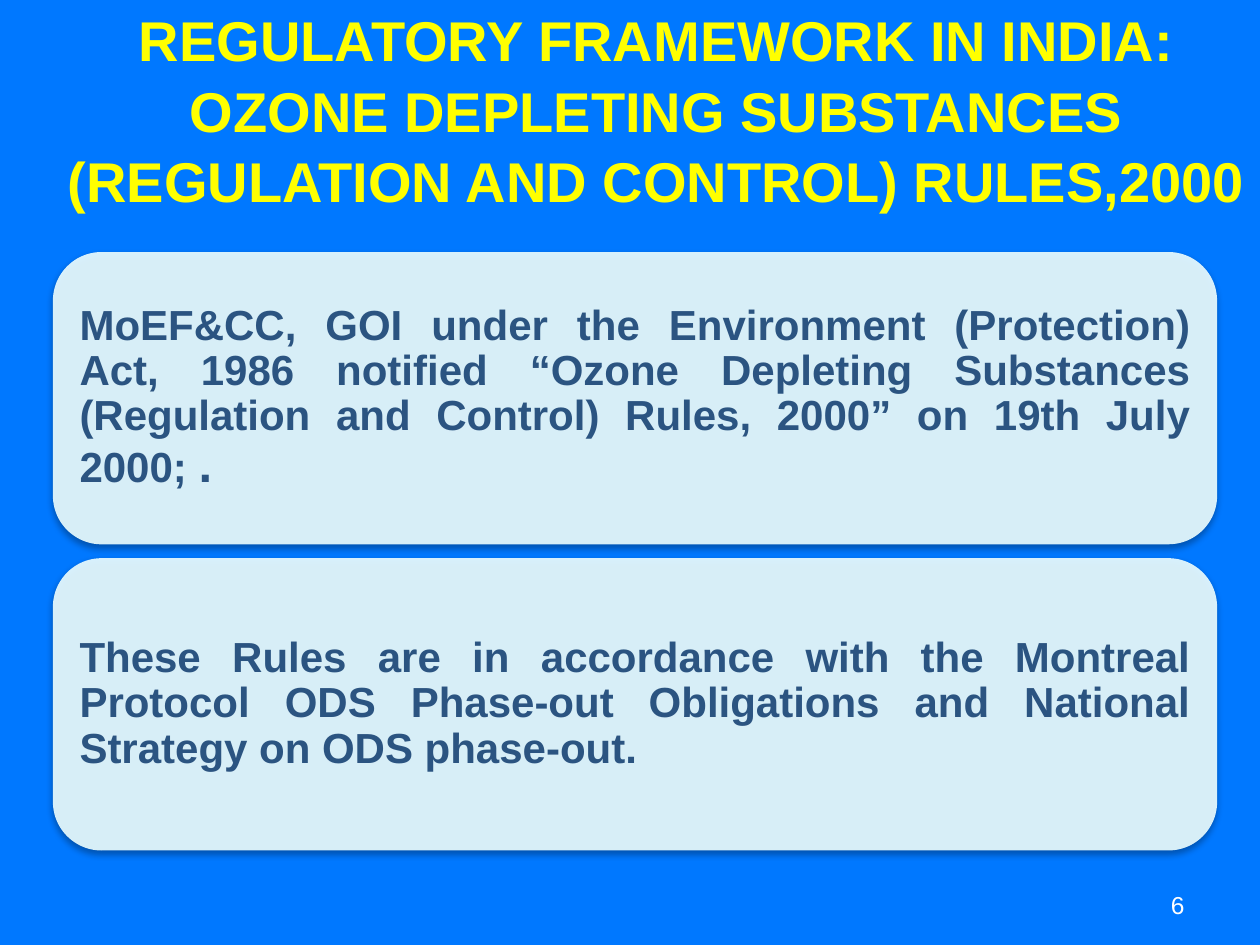
from lxml import etree
from pptx import Presentation
from pptx import util as u
from pptx.dml.color import RGBColor
from pptx.enum import shapes, text
from pptx.oxml import ns

THEME = {
    "font": "Arial",
    "background": "0078FF",
    "title": "FFFF00",
    "card": "EFFFFF",
    "card_opacity": 90,
    "body": "2B5481",
    "number": "FFFFFF",
    "shadow": "000000",
    "title_size": 32,
    "body_size": 24,
    "stop_size": 28,
    "number_size": 14,
}
TITLE = ("REGULATORY FRAMEWORK IN INDIA: OZONE DEPLETING SUBSTANCES "
         "(REGULATION AND CONTROL) RULES,2000")
CARDS = [
    [("MoEF&CC, GOI under the Environment (Protection) Act, 1986 notified "
      "“Ozone Depleting Substances (Regulation and Control) Rules, 2000” "
      "on 19th July 2000; ", "body_size"),
     (".", "stop_size")],
    [("These Rules are in accordance with the Montreal Protocol ODS Phase-out "
      "Obligations and National Strategy on ODS phase-out.", "body_size")],
]
PAGE_NUMBER = "6"
LEFT, CARD_TOP, CARD_WIDTH, CARD_HEIGHT, CARD_GAP = 0.42, 2, 9.24, 2.32, 0.11


def color(name):
    return RGBColor.from_string(THEME[name])


def write(shape, runs, color_name, alignment, anchor, bold=True, spacing=None):
    frame = shape.text_frame
    frame.word_wrap = True
    frame.auto_size = text.MSO_AUTO_SIZE.NONE
    frame.vertical_anchor = anchor
    paragraph = frame.paragraphs[0]
    paragraph.alignment = alignment
    paragraph.line_spacing = spacing
    for content, size in runs:
        run = paragraph.add_run()
        run.text = content
        run.font.name = THEME["font"]
        run.font.size = u.Pt(THEME[size])
        run.font.bold = bold
        run.font.color.rgb = color(color_name)


def add_alpha(color_element, percent):
    etree.SubElement(color_element, ns.qn("a:alpha"), val=str(percent * 1000))


def add_shadow(shape):
    effects = etree.SubElement(shape.element.spPr, ns.qn("a:effectLst"))
    shadow = etree.SubElement(
        effects, ns.qn("a:outerShdw"), blurRad=str(u.Pt(3.5)),
        dist=str(u.Pt(2.2)), dir="5400000", rotWithShape="0")
    add_alpha(etree.SubElement(shadow, ns.qn("a:srgbClr"), val=THEME["shadow"]), 32)


def add_card(slide, index, runs):
    top = CARD_TOP + index * (CARD_HEIGHT + CARD_GAP)
    card = slide.shapes.add_shape(
        shapes.MSO_SHAPE.ROUNDED_RECTANGLE, u.Inches(LEFT), u.Inches(top),
        u.Inches(CARD_WIDTH), u.Inches(CARD_HEIGHT))
    card.fill.solid()
    card.fill.fore_color.rgb = color("card")
    add_alpha(card.element.spPr.find(".//" + ns.qn("a:srgbClr")), THEME["card_opacity"])
    card.line.fill.background()
    add_shadow(card)
    write(card, runs, "body", text.PP_ALIGN.JUSTIFY, text.MSO_ANCHOR.MIDDLE, spacing=0.9)


def main():
    presentation = Presentation()
    presentation.slide_width, presentation.slide_height = u.Inches(10), u.Inches(7.5)
    slide = presentation.slides.add_slide(presentation.slide_layouts[5])
    slide.background.fill.solid()
    slide.background.fill.fore_color.rgb = color("background")

    title = slide.shapes.title
    title.left, title.top = u.Inches(LEFT), u.Inches(0.17)
    title.width, title.height = u.Inches(10 - LEFT), u.Inches(1.58)
    write(title, [(TITLE, "title_size")], "title",
          text.PP_ALIGN.CENTER, text.MSO_ANCHOR.BOTTOM, spacing=1.05)

    for index, runs in enumerate(CARDS):
        add_card(slide, index, runs)

    number = slide.shapes.add_textbox(
        u.Inches(7.17), u.Inches(6.83), u.Inches(2.33), u.Inches(0.52))
    write(number, [(PAGE_NUMBER, "number_size")], "number",
          text.PP_ALIGN.RIGHT, text.MSO_ANCHOR.BOTTOM, bold=False)
    presentation.save("out.pptx")


if __name__ == "__main__":
    main()
